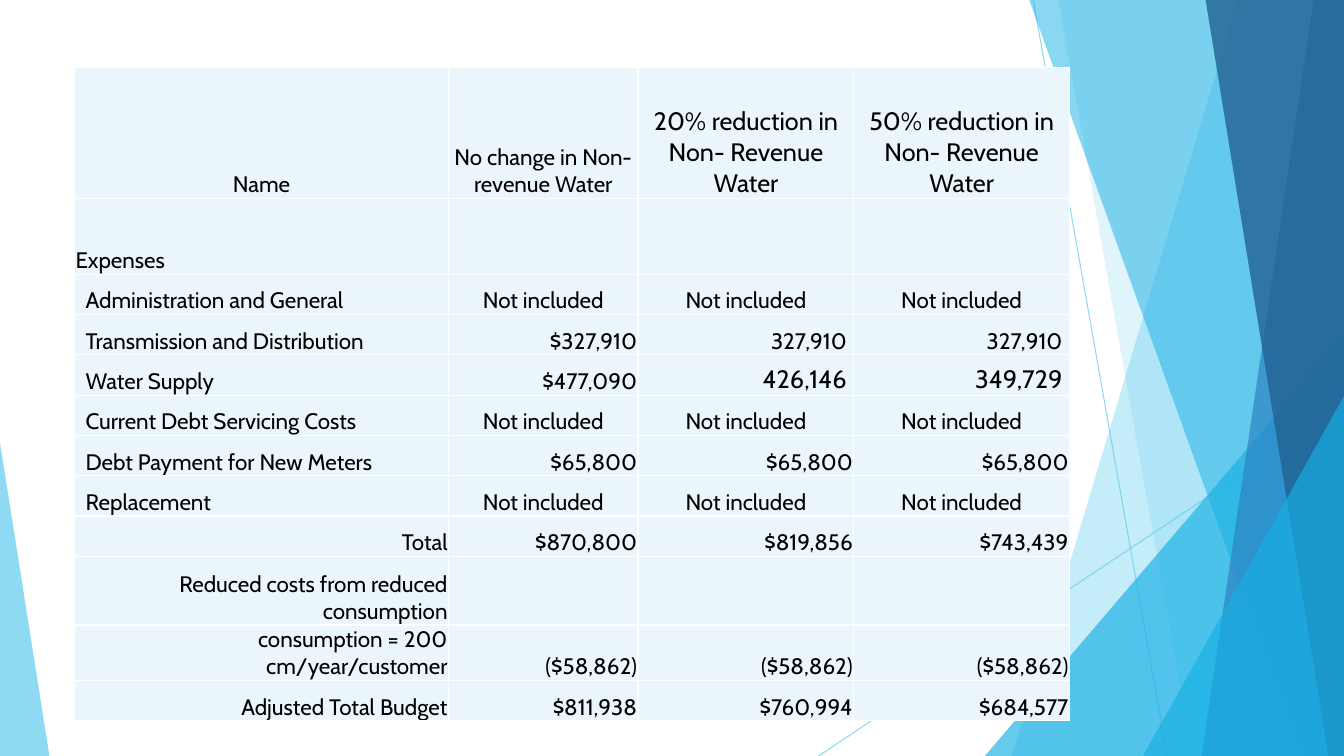
from lxml import etree
from pptx import Presentation
from pptx import util as u
from pptx.dml.color import RGBColor
from pptx.enum import shapes, text
from pptx.oxml.ns import qn

SKY, CYAN, BLUE, NAVY = "5FCBEF", "17B0E4", "2E83C3", "226292"
WHITE, BLACK, PALE = "FFFFFF", "000000", "EAF6FC"
LEFT, CENTER, RIGHT = text.PP_ALIGN.LEFT, text.PP_ALIGN.CENTER, text.PP_ALIGN.RIGHT
NOT_INCLUDED = ["Not included"] * 3
BLANK = [""] * 3

RAYS = [((76.88, 0), (86.85, 100)), ((100, 53.73), (60.9, 100))]
BANDS = [
    ("band", 92.1, 75.3, SKY, 36),
    ("band", 78.75, 88.73, SKY, 20),
    ("corner", 73.28, 44.4, CYAN, 66),
    ("band", 76.58, 96.83, CYAN, 50),
    ("band", 97.73, 89.4, BLUE, 70),
    ("band", 89.7, 98.85, NAVY, 80),
    ("corner", 85.05, 52.4, CYAN, 66),
]

COLUMNS = [3.71, 1.88, 2.14, 2.14]
ROWS = [
    (1.3, "Name", CENTER, ["No change in Non- revenue Water",
                           "20% reduction in Non- Revenue Water",
                           "50% reduction in Non- Revenue Water"]),
    (0.75, "Expenses", LEFT, BLANK),
    (0.4, "Administration and General", LEFT, NOT_INCLUDED),
    (0.4, "Transmission and Distribution", LEFT, ["$327,910", "327,910", "327,910"]),
    (0.4, "Water Supply", LEFT, ["$477,090", "426,146", "349,729"]),
    (0.4, "Current Debt Servicing Costs", LEFT, NOT_INCLUDED),
    (0.4, "Debt Payment for New Meters", LEFT, ["$65,800"] * 3),
    (0.4, "Replacement", LEFT, NOT_INCLUDED),
    (0.4, "Total", RIGHT, ["$870,800", "$819,856", "$743,439"]),
    (0.68, "Reduced costs from reduced consumption", RIGHT, BLANK),
    (0.55, "consumption = 200 cm/year/customer", RIGHT, ["($58,862)"] * 3),
    (0.4, "Adjusted Total Budget", RIGHT, ["$811,938", "$760,994", "$684,577"]),
]
LARGE_CELLS = {(0, 2), (0, 3), (4, 2), (4, 3)}


def rgb(value):
    """Turn a hex string into a colour."""
    return RGBColor.from_string(value)


def set_opacity(shape, percent):
    """Make the colour of a shape or connector partly transparent."""
    for color in shape._element.spPr.iter(qn("a:srgbClr")):
        etree.SubElement(color, qn("a:alpha"), val=str(percent * 1000))


def share(box, x, y):
    """Return the point at x and y percent of a box."""
    left, top, width, height = box
    return round(left + width * x / 100), round(top + height * y / 100)


def paint(shape, color, opacity):
    """Give a shape a translucent fill and no outline."""
    shape.shadow.inherit = False
    shape.fill.solid()
    shape.fill.fore_color.rgb = rgb(color)
    shape.line.fill.background()
    set_opacity(shape, opacity)


def add_ray(slide, box, start, end):
    """Draw a thin translucent line across the box."""
    ray = slide.shapes.add_connector(
        shapes.MSO_CONNECTOR.STRAIGHT, *share(box, *start), *share(box, *end))
    ray.line.color.rgb = rgb(SKY)
    ray.line.width = u.Pt(0.75)
    set_opacity(ray, 70)
    etree.SubElement(ray._element.spPr, qn("a:effectLst"))


def add_band(slide, box, top_x, bottom_x, color, opacity):
    """Fill the box from a slanted left edge to its right side."""
    builder = slide.shapes.build_freeform(*share(box, top_x, 0))
    corners = [(100, 0), (100, 100), (bottom_x, 100)]
    builder.add_line_segments([share(box, *corner) for corner in corners], close=True)
    paint(builder.convert_to_shape(), color, opacity)


def add_corner(slide, box, left, right, top, apex, color, opacity):
    """Place a right triangle on the bottom of the box."""
    x, y = share(box, left, top)
    end_x, end_y = share(box, right, 100)
    triangle = slide.shapes.add_shape(
        shapes.MSO_SHAPE.ISOSCELES_TRIANGLE, x, y, end_x - x, end_y - y)
    triangle.adjustments[0] = apex
    paint(triangle, color, opacity)


def add_backdrop(slide, box):
    """Draw the rays, bands and corner triangles behind the table."""
    for start, end in RAYS:
        add_ray(slide, box, start, end)
    for kind, first, second, color, opacity in BANDS:
        if kind == "band":
            add_band(slide, box, first, second, color, opacity)
        else:
            add_corner(slide, box, first, 100, second, 1, color, opacity)
    add_corner(slide, box, 0, 3.68, 58.53, 0, SKY, 70)


def write(frame, words, size=16, align=LEFT, color=BLACK, font="Cabin"):
    """Write one formatted paragraph into a text frame."""
    paragraph = frame.paragraphs[0]
    paragraph.alignment = align
    run = paragraph.add_run()
    run.text = words
    run.font.size = u.Pt(size)
    run.font.name = font
    run.font.bold = False
    run.font.color.rgb = rgb(color)


def style_cell(cell, left, right):
    """Set the margins, borders and fill of a table cell."""
    cell.margin_left, cell.margin_right = u.Inches(left), u.Inches(right)
    cell.margin_top, cell.margin_bottom = u.Inches(0.01), 0
    cell.vertical_anchor = text.MSO_ANCHOR.BOTTOM
    properties = cell._tc.get_or_add_tcPr()
    for side in ("a:lnL", "a:lnR", "a:lnT", "a:lnB"):
        line = etree.SubElement(properties, qn(side), w=str(u.Pt(1)))
        fill = etree.SubElement(line, qn("a:solidFill"))
        etree.SubElement(fill, qn("a:srgbClr"), val=WHITE)
    cell.fill.solid()
    cell.fill.fore_color.rgb = rgb(PALE)


def add_budget_table(slide, box):
    """Fill the box with the budget comparison."""
    table = slide.shapes.add_table(len(ROWS), len(COLUMNS), *box).table
    table.first_row = table.horz_banding = False
    for column, weight in zip(table.columns, COLUMNS):
        column.width = round(box[2] * weight / sum(COLUMNS))
    total_height = sum(row[0] for row in ROWS)
    for i, (weight, name, name_align, values) in enumerate(ROWS):
        table.rows[i].height = round(box[3] * weight / total_height)
        for j, words in enumerate([name, *values]):
            cell = table.cell(i, j)
            indented = j == 0 and 2 <= i <= 7
            plain_number = words[:1].isdigit() and i > 0
            style_cell(cell, 0.11 if indented else 0.01, 0.07 if plain_number else 0.01)
            centered = i == 0 or words == "Not included"
            align = name_align if j == 0 else CENTER if centered else RIGHT
            if words:
                write(cell.text_frame, words, align=align,
                      size=18 if (i, j) in LARGE_CELLS else 16)


def main():
    """Build and save the budget slide."""
    presentation = Presentation()
    presentation.slide_width, presentation.slide_height = u.Inches(13.33), u.Inches(7.5)
    slide = presentation.slides.add_slide(presentation.slide_layouts[6])
    page = (0, 0, presentation.slide_width, presentation.slide_height)
    add_backdrop(slide, page)
    add_budget_table(slide, share(page, 5.55, 8.93) + share(page, 74.03, 86.4))
    presentation.save("out.pptx")


if __name__ == "__main__":
    main()
